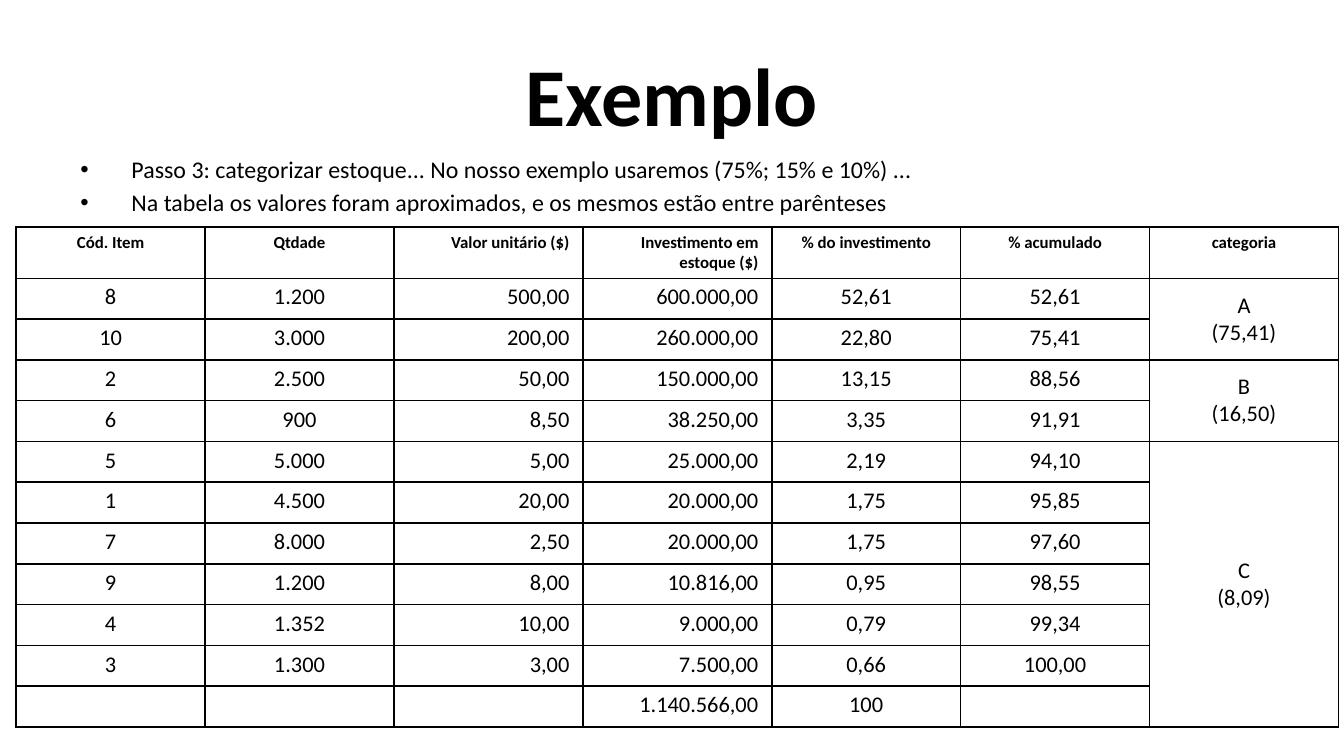
from lxml import etree
from pptx import Presentation
from pptx.dml.color import RGBColor
from pptx.enum.text import MSO_ANCHOR as ANCHOR, PP_ALIGN as ALIGN
from pptx.oxml.ns import qn
from pptx.util import Inches, Pt

# Content
TITLE = "Exemplo"
BULLETS = [
    "Passo 3: categorizar estoque... No nosso exemplo usaremos (75%; 15% e 10%) ...",
    "Na tabela os valores foram aproximados, e os mesmos estão entre parênteses",
]
HEADER = ["Cód. Item", "Qtdade", "Valor unitário ($)", "Investimento em estoque ($)",
          "% do investimento", "% acumulado", "categoria"]
ITEMS = [
    ("8", "1.200", "500,00", "600.000,00", "52,61", "52,61"),
    ("10", "3.000", "200,00", "260.000,00", "22,80", "75,41"),
    ("2", "2.500", "50,00", "150.000,00", "13,15", "88,56"),
    ("6", "900", "8,50", "38.250,00", "3,35", "91,91"),
    ("5", "5.000", "5,00", "25.000,00", "2,19", "94,10"),
    ("1", "4.500", "20,00", "20.000,00", "1,75", "95,85"),
    ("7", "8.000", "2,50", "20.000,00", "1,75", "97,60"),
    ("9", "1.200", "8,00", "10.816,00", "0,95", "98,55"),
    ("4", "1.352", "10,00", "9.000,00", "0,79", "99,34"),
    ("3", "1.300", "3,00", "7.500,00", "0,66", "100,00"),
    ("", "", "", "1.140.566,00", "100", ""),
]
CATEGORIES = [("A", "(75,41)", 2), ("B", "(16,50)", 2), ("C", "(8,09)", 7)]  # name, share, rows
MONEY_COLS = (2, 3)

COLORS = {"ink": "000000", "paper": "FFFFFF"}
FONT = "Calibri"
TABLE_W, TABLE_H, HEADER_H = 9.84, 3.72, 0.38


def write(tf, lines, size, bold=False, align=ALIGN.LEFT):
    """Fill a text frame with one paragraph per line."""
    for i, line in enumerate(lines):
        p = tf.paragraphs[0] if i == 0 else tf.add_paragraph()
        p.alignment = align
        if not line:  # an empty cell keeps the row height of its text size
            etree.SubElement(p._p, qn("a:endParaRPr"), sz=str(size * 100))
            continue
        r = p.add_run()
        r.text = line
        r.font.name, r.font.size, r.font.bold = FONT, Pt(size), bold
        r.font.color.rgb = RGBColor.from_string(COLORS["ink"])


def add_bullet(p, indent):
    pPr = p._p.get_or_add_pPr()
    pPr.set("marL", str(indent))
    pPr.set("indent", str(-indent))
    spacing = etree.SubElement(pPr, qn("a:spcBef"))
    etree.SubElement(spacing, qn("a:spcPct"), val="20000")
    etree.SubElement(pPr, qn("a:buFont"), typeface="Arial")
    etree.SubElement(pPr, qn("a:buChar"), char="•")


def style_cell(cell):
    cell.margin_left = cell.margin_right = Inches(0.1)
    cell.margin_top = cell.margin_bottom = Inches(0.04)
    tcPr = cell._tc.get_or_add_tcPr()
    for side in ("lnL", "lnR", "lnT", "lnB"):
        ln = etree.SubElement(tcPr, qn(f"a:{side}"), w=str(Pt(1)))
        fill = etree.SubElement(ln, qn("a:solidFill"))
        etree.SubElement(fill, qn("a:srgbClr"), val=COLORS["ink"])
    cell.fill.solid()
    cell.fill.fore_color.rgb = RGBColor.from_string(COLORS["paper"])


# Widescreen slide, 16:9
prs = Presentation()
prs.slide_width = Inches(10)
prs.slide_height = Inches(10 * 9 / 16)
s = prs.slides.add_slide(prs.slide_layouts[5])

# Title
title = s.shapes.title
title.left, title.top, title.width, title.height = map(Inches, (0.5, 0.23, 9, 0.94))
title.text_frame.vertical_anchor = ANCHOR.MIDDLE
write(title.text_frame, [TITLE], 44, bold=True, align=ALIGN.CENTER)

# Bullets
tf = s.shapes.add_textbox(*map(Inches, (0.5, 1.1, 9, 0.53))).text_frame
tf.word_wrap = True
write(tf, BULLETS, 12.8)
for p in tf.paragraphs:
    add_bullet(p, Inches(0.38))

# Table
rows, cols = len(ITEMS) + 1, len(HEADER)
table = s.shapes.add_table(rows, cols, *map(Inches, (0.12, 1.69, TABLE_W, TABLE_H))).table
table.first_row = table.horz_banding = False
for col in table.columns:
    col.width = Inches(TABLE_W / cols)
for i, row in enumerate(table.rows):
    row.height = Inches((TABLE_H - HEADER_H) / len(ITEMS) if i else HEADER_H)
for cell in table.iter_cells():
    style_cell(cell)
for i, values in enumerate([HEADER, *ITEMS]):
    for j, value in enumerate(values):
        write(table.cell(i, j).text_frame, [value], 12 if i else 9, bold=i == 0,
              align=ALIGN.RIGHT if j in MONEY_COLS else ALIGN.CENTER)

# Merged category cells
top = 1
for name, share, span in CATEGORIES:
    cell = table.cell(top, cols - 1)
    cell.merge(table.cell(top + span - 1, cols - 1))
    cell.vertical_anchor = ANCHOR.MIDDLE
    write(cell.text_frame, [name, share], 12, align=ALIGN.CENTER)
    top += span

prs.save("out.pptx")
